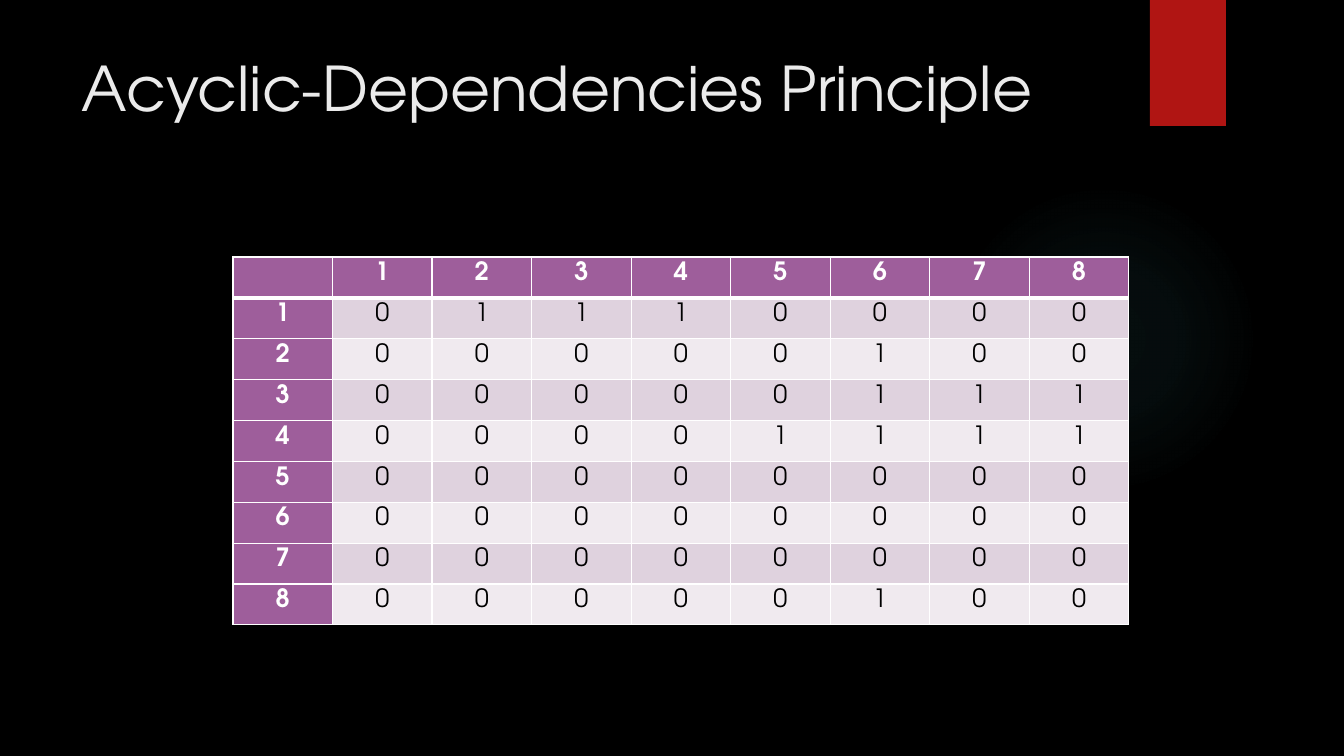
from lxml import etree
from pptx import Presentation
from pptx.dml.color import RGBColor
from pptx.enum.shapes import MSO_SHAPE
from pptx.enum.text import MSO_ANCHOR, PP_ALIGN
from pptx.oxml import parse_xml
from pptx.util import Pt

TITLE = "Acyclic-Dependencies Principle"
DEPENDENCIES = [
    (0, 1, 1, 1, 0, 0, 0, 0),
    (0, 0, 0, 0, 0, 1, 0, 0),
    (0, 0, 0, 0, 0, 1, 1, 1),
    (0, 0, 0, 0, 1, 1, 1, 1),
    (0, 0, 0, 0, 0, 0, 0, 0),
    (0, 0, 0, 0, 0, 0, 0, 0),
    (0, 0, 0, 0, 0, 0, 0, 0),
    (0, 0, 0, 0, 0, 1, 0, 0),
]
GLOW_STOPS = [(0, 7), (36, 6), (69, 0)]

SLIDE_SIZE = (1344, 756)
GLOW_BOX = (949, 184, 310, 310)
RIBBON_BOX = (1150, 0, 76, 126)
TITLE_BOX = (72, 45, 1037, 154)
TABLE_BOX = (233, 257, 896, 368)

FONT = "TeX Gyre Adventor"
BLACK = RGBColor(0x00, 0x00, 0x00)
WHITE = RGBColor(0xFF, 0xFF, 0xFF)
TITLE_GREY = RGBColor(0xEB, 0xEB, 0xEB)
RED = RGBColor(0xB0, 0x15, 0x13)
TEAL = RGBColor(0x50, 0xB9, 0xC1)
PURPLE = RGBColor(0x9E, 0x5E, 0x9B)
BANDS = [RGBColor(0xF0, 0xEA, 0xEF), RGBColor(0xDF, 0xD2, 0xDE)]

OVAL = MSO_SHAPE.OVAL
RECTANGLE = MSO_SHAPE.RECTANGLE
TOP = MSO_ANCHOR.TOP
LEFT = PP_ALIGN.LEFT
CENTER = PP_ALIGN.CENTER

EMU_PER_PX = 914400 / 100.8
DRAWING = "http://schemas.openxmlformats.org/drawingml/2006/main"


def emu(*lengths):
    return [round(length * EMU_PER_PX) for length in lengths]


def add_plain_shape(slide, kind, box, color):
    shape = slide.shapes.add_shape(kind, *emu(*box))
    shape.shadow.inherit = False
    shape.fill.solid()
    shape.fill.fore_color.rgb = color
    shape.line.fill.background()
    return shape


def apply_glow(shape):
    stops = "".join(
        f'<a:gs pos="{position * 1000}"><a:srgbClr val="{TEAL}">'
        f'<a:alpha val="{alpha * 1000}"/></a:srgbClr></a:gs>'
        for position, alpha in GLOW_STOPS
    )
    gradient = parse_xml(
        f'<a:gradFill xmlns:a="{DRAWING}"><a:gsLst>{stops}</a:gsLst>'
        '<a:path path="circle"><a:fillToRect l="50000" t="50000" r="50000" b="50000"/>'
        "</a:path></a:gradFill>"
    )
    properties = shape.element.spPr
    properties.replace(properties.find(f"{{{DRAWING}}}solidFill"), gradient)


def format_text(paragraph, text, size, color, bold, alignment):
    paragraph.text = text
    paragraph.alignment = alignment
    for run in paragraph.runs:
        run.font.name = FONT
        run.font.size = Pt(size)
        run.font.bold = bold
        run.font.color.rgb = color


def add_borders(cell, widths):
    properties = cell._tc.get_or_add_tcPr()
    for side, width in widths.items():
        line = etree.SubElement(properties, f"{{{DRAWING}}}ln{side}", w=str(Pt(width)))
        fill = etree.SubElement(line, f"{{{DRAWING}}}solidFill")
        etree.SubElement(fill, f"{{{DRAWING}}}srgbClr", val=str(WHITE))


def add_matrix(slide):
    labels = [str(number) for number in range(1, len(DEPENDENCIES) + 1)]
    rows = [["", *labels]]
    rows += [[label, *map(str, values)] for label, values in zip(labels, DEPENDENCIES)]
    count = len(rows)
    left, top, width, height = emu(*TABLE_BOX)
    table = slide.shapes.add_table(count, count, left, top, width, height).table
    for column in table.columns:
        column.width = width // count
    for row in table.rows:
        row.height = height // count
    for row_index, values in enumerate(rows):
        for column_index, value in enumerate(values):
            cell = table.cell(row_index, column_index)
            heading = row_index == 0 or column_index == 0
            add_borders(cell, {
                "L": 1,
                "R": 1,
                "T": 3 if row_index == 1 else 1,
                "B": 3 if row_index == 0 else 1,
            })
            cell.fill.solid()
            cell.fill.fore_color.rgb = PURPLE if heading else BANDS[row_index % 2]
            format_text(cell.text_frame.paragraphs[0], value, 18,
                        WHITE if heading else BLACK, heading, CENTER)


def main():
    presentation = Presentation()
    presentation.slide_width, presentation.slide_height = emu(*SLIDE_SIZE)
    slide = presentation.slides.add_slide(presentation.slide_layouts[6])
    slide.background.fill.solid()
    slide.background.fill.fore_color.rgb = BLACK

    apply_glow(add_plain_shape(slide, OVAL, GLOW_BOX, TEAL))
    add_plain_shape(slide, RECTANGLE, RIBBON_BOX, RED)

    title_frame = slide.shapes.add_textbox(*emu(*TITLE_BOX)).text_frame
    title_frame.word_wrap = True
    title_frame.vertical_anchor = TOP
    format_text(title_frame.paragraphs[0], TITLE, 44, TITLE_GREY, False, LEFT)

    add_matrix(slide)
    presentation.save("out.pptx")


if __name__ == "__main__":
    main()
